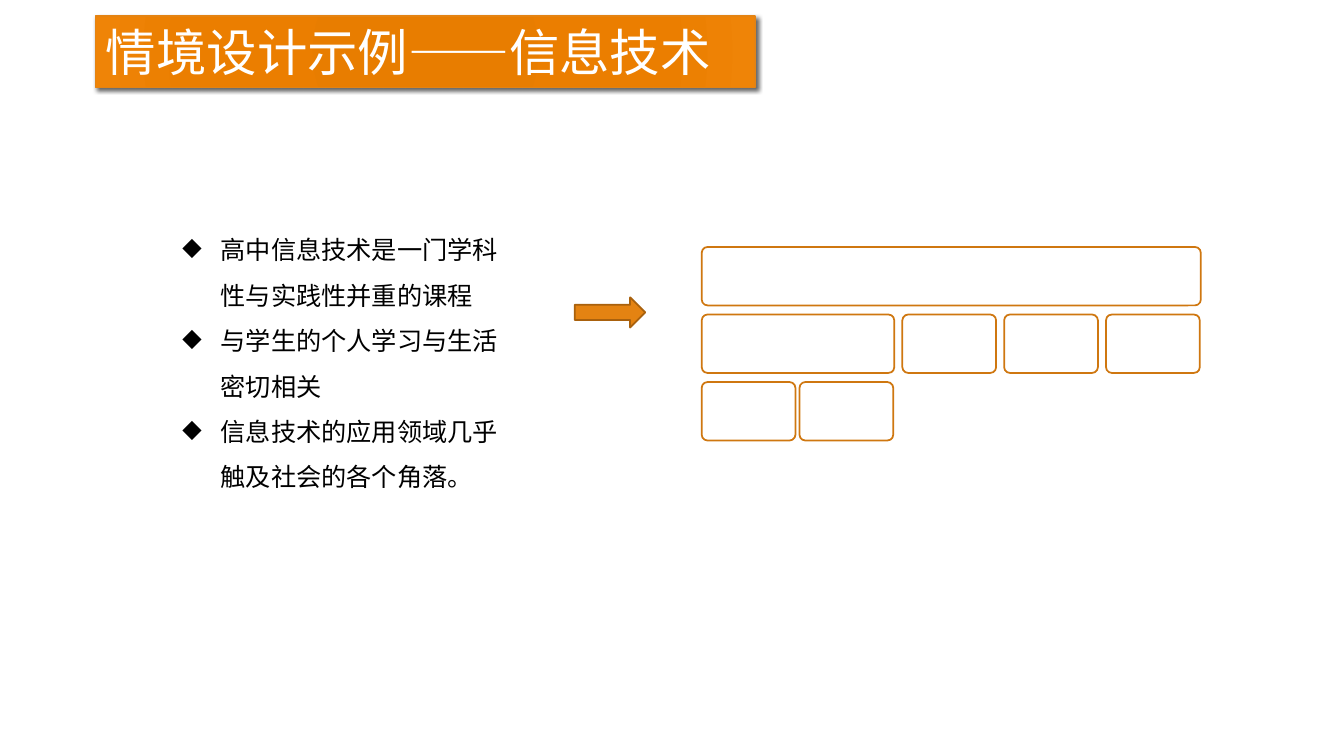
import pptx
import pptx.dml.color
import pptx.enum.shapes
import pptx.enum.text
import pptx.oxml
import pptx.util
from pptx.util import Inches

NAMESPACE = 'xmlns:a="http://schemas.openxmlformats.org/drawingml/2006/main"'
CJK_FONT = "Noto Sans CJK SC"


def color(hex_code):
    return pptx.dml.color.RGBColor.from_string(hex_code)


def style_paragraph(paragraph, size, latin_font, hex_code):
    """Set size, colour, Latin font and the shared East Asian font."""
    font = paragraph.font
    font.size = pptx.util.Pt(size)
    font.name = latin_font
    font.color.rgb = color(hex_code)
    properties = paragraph._p.get_or_add_pPr().find(pptx.oxml.ns.qn("a:defRPr"))
    properties.append(pptx.oxml.parse_xml(f'<a:ea {NAMESPACE} typeface="{CJK_FONT}"/>'))


presentation = pptx.Presentation()
presentation.slide_width = Inches(13.33)
presentation.slide_height = Inches(7.5)
slide = presentation.slides.add_slide(presentation.slide_layouts[5])

# Title banner
title = slide.shapes.title
title.left, title.top = Inches(0.95), Inches(0.16)
title.width, title.height = Inches(6.54), Inches(0.71)
stops = "".join(
    f'<a:gs pos="{position * 1000}"><a:srgbClr val="{hex_code}"/></a:gs>'
    for position, hex_code in [(0, "E57B00"), (34, "E87D00"), (70, "EB7E00"), (100, "EF8407")]
)
banner = title._element.spPr
banner.append(pptx.oxml.parse_xml(
    f'<a:gradFill {NAMESPACE} rotWithShape="1"><a:gsLst>{stops}</a:gsLst><a:path path="circle">'
    '<a:fillToRect l="100000" t="100000" r="100000" b="100000"/></a:path></a:gradFill>'
))
title.line.color.rgb = color("E48312")
title.line.width = pptx.util.Pt(1)
banner.append(pptx.oxml.parse_xml(
    f'<a:effectLst {NAMESPACE}><a:outerShdw blurRad="38100" dist="25400" dir="2700000">'
    '<a:srgbClr val="000000"><a:alpha val="60000"/></a:srgbClr></a:outerShdw></a:effectLst>'
))
title_frame = title.text_frame
title_frame.text = "情境设计示例——信息技术"
title_frame.auto_size = pptx.enum.text.MSO_AUTO_SIZE.NONE
title_frame.vertical_anchor = pptx.enum.text.MSO_ANCHOR.TOP
title_frame.paragraphs[0].alignment = pptx.enum.text.PP_ALIGN.LEFT
style_paragraph(title_frame.paragraphs[0], 36, "Calibri", "FFFFFF")

# Course features
features = slide.shapes.add_textbox(Inches(1.71), Inches(2.13), Inches(3.42), Inches(2.76)).text_frame
features.word_wrap = True
features.text = "\n".join([
    "高中信息技术是一门学科性与实践性并重的课程",
    "与学生的个人学习与生活密切相关",
    "信息技术的应用领域几乎触及社会的各个角落。",
])
for feature in features.paragraphs:
    feature.line_spacing = 1.5
    style_paragraph(feature, 18, CJK_FONT, "000000")
    properties = feature._p.get_or_add_pPr()
    properties.set("marL", str(Inches(0.38)))
    properties.set("indent", str(Inches(-0.38)))
    bullet = pptx.oxml.parse_xml(f'<a:buChar {NAMESPACE} char="◆"/>')
    properties.find(pptx.oxml.ns.qn("a:defRPr")).addprevious(bullet)

# Arrow from the features to the hierarchy
arrow = slide.shapes.add_shape(
    pptx.enum.shapes.MSO_SHAPE.RIGHT_ARROW, Inches(5.7), Inches(2.95), Inches(0.7), Inches(0.3))
arrow.shadow.inherit = False
arrow.fill.solid()
arrow.fill.fore_color.rgb = color("E48312")
arrow.line.color.rgb = color("A9610D")
arrow.line.width = pptx.util.Pt(1.25)

# Hierarchy of empty boxes: (left, width) in each row
hierarchy_rows = [
    [(6.96, 4.95)],
    [(6.96, 1.91), (8.95, 0.93), (9.96, 0.93), (10.97, 0.93)],
    [(6.96, 0.93), (7.93, 0.93)],
]
hierarchy = slide.shapes.add_group_shape()
for level, row in enumerate(hierarchy_rows):
    for left, width in row:
        box = hierarchy.shapes.add_shape(
            pptx.enum.shapes.MSO_SHAPE.ROUNDED_RECTANGLE,
            Inches(left), Inches(2.45 + 0.67 * level), Inches(width), Inches(0.58))
        box.adjustments[0] = 0.1
        box.shadow.inherit = False
        box.fill.solid()
        box.fill.fore_color.rgb = color("FFFFFF")
        box.line.color.rgb = color("CF7710")
        box.line.width = pptx.util.Pt(1.25)

presentation.save("out.pptx")
